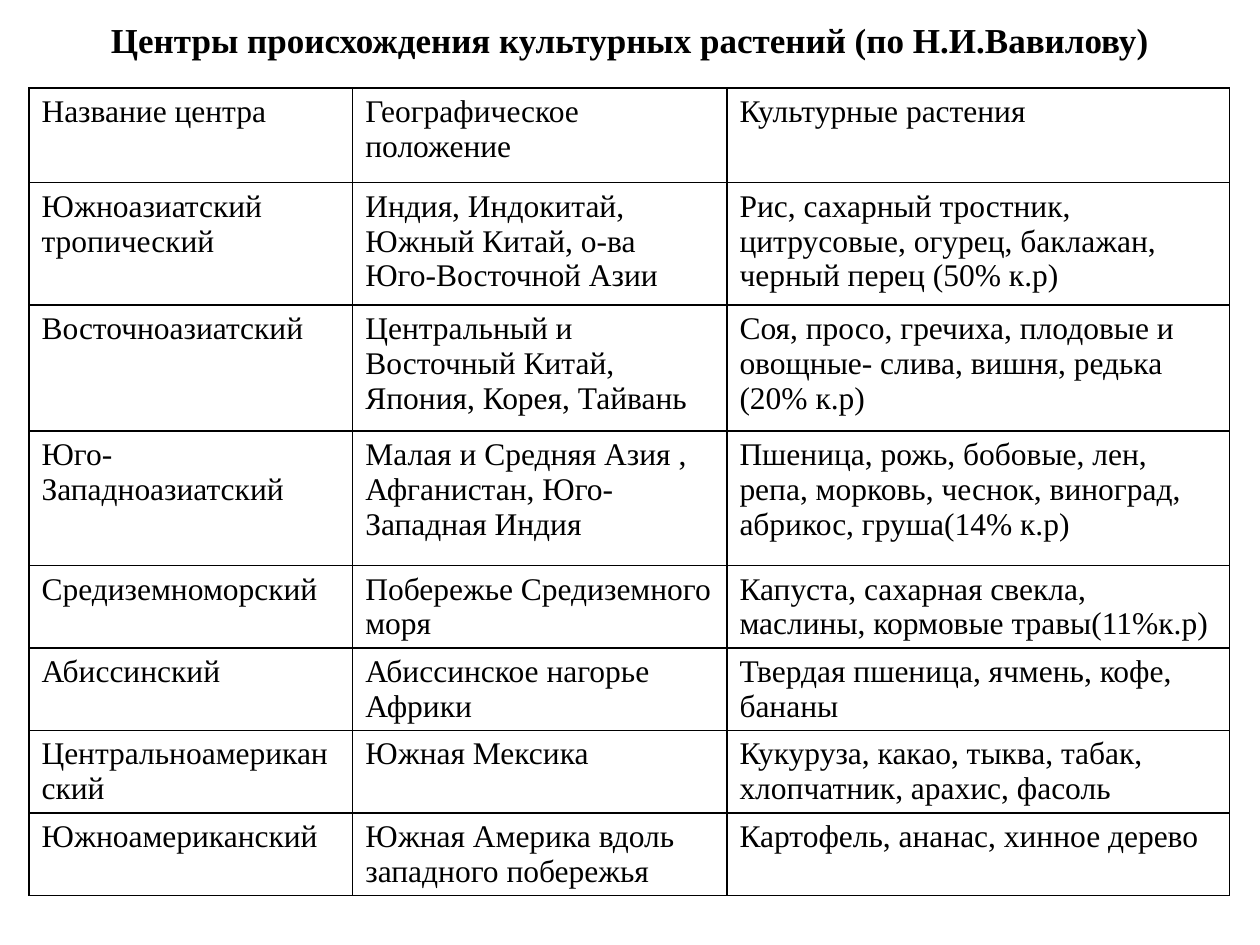
from lxml.etree import SubElement
from pptx import Presentation
from pptx.dml.color import RGBColor
from pptx.enum.text import MSO_ANCHOR, PP_ALIGN
from pptx.oxml.ns import qn
from pptx.util import Inches, Pt

FONT = "Times New Roman"
INK = "000000"
TITLE = "Центры происхождения культурных растений (по Н.И.Вавилову)"
CENTERS = [
    ("Название центра", "Географическое положение", "Культурные растения"),
    ("Южноазиатский тропический",
     "Индия, Индокитай, Южный Китай, о-ва Юго-Восточной Азии",
     "Рис, сахарный тростник, цитрусовые, огурец, баклажан, черный перец (50% к.р)"),
    ("Восточноазиатский",
     "Центральный и Восточный Китай, Япония, Корея, Тайвань",
     "Соя, просо, гречиха, плодовые и овощные- слива, вишня, редька (20% к.р)"),
    ("Юго-Западноазиатский",
     "Малая и Средняя Азия , Афганистан, Юго-Западная Индия",
     "Пшеница, рожь, бобовые, лен, репа, морковь, чеснок, виноград, абрикос, груша(14% к.р)"),
    ("Средиземноморский",
     "Побережье Средиземного моря",
     "Капуста, сахарная свекла, маслины, кормовые травы(11%к.р)"),
    ("Абиссинский",
     "Абиссинское нагорье Африки",
     "Твердая пшеница, ячмень, кофе, бананы"),
    ("Центральноамериканский",
     "Южная Мексика",
     "Кукуруза, какао, тыква, табак, хлопчатник, арахис, фасоль"),
    ("Южноамериканский",
     "Южная Америка вдоль западного побережья",
     "Картофель, ананас, хинное дерево"),
]
COLUMN_WIDTHS = [2.57, 2.97, 3.99]
ROW_HEIGHTS = [0.75, 0.97, 1, 1.07] + [0.65] * 4


def color(value):
    return RGBColor.from_string(value)


def style(paragraph, size, bold=False):
    paragraph.font.name = FONT
    paragraph.font.size = Pt(size)
    paragraph.font.bold = bold
    paragraph.font.color.rgb = color(INK)


def outline(cell):
    properties = cell._tc.get_or_add_tcPr()
    for side in ("a:lnL", "a:lnR", "a:lnT", "a:lnB"):
        border = SubElement(properties, qn(side), w=str(Pt(1)))
        fill = SubElement(border, qn("a:solidFill"))
        SubElement(fill, qn("a:srgbClr"), val=INK)


def add_title(slide):
    title = slide.shapes.title
    title.left, title.top = Inches(0.5), 0
    title.width, title.height = Inches(9), Inches(0.62)
    title.text_frame.text = TITLE
    title.text_frame.vertical_anchor = MSO_ANCHOR.MIDDLE
    heading = title.text_frame.paragraphs[0]
    heading.alignment = PP_ALIGN.CENTER
    style(heading, 20, True)


def add_centers(slide):
    table = slide.shapes.add_table(
        len(CENTERS), len(COLUMN_WIDTHS), Inches(0.23), Inches(0.7),
        Inches(sum(COLUMN_WIDTHS)), Inches(sum(ROW_HEIGHTS))).table
    table.first_row = table.horz_banding = False
    for column, width in zip(table.columns, COLUMN_WIDTHS):
        column.width = Inches(width)
    for row, height, center in zip(table.rows, ROW_HEIGHTS, CENTERS):
        row.height = Inches(height)
        for cell, entry in zip(row.cells, center):
            cell.text = entry
            style(cell.text_frame.paragraphs[0], 18)
            outline(cell)
            cell.fill.background()


def main():
    deck = Presentation()
    deck.slide_width, deck.slide_height = Inches(10), Inches(7.5)
    slide = deck.slides.add_slide(deck.slide_layouts[5])
    add_title(slide)
    add_centers(slide)
    deck.save("out.pptx")


if __name__ == "__main__":
    main()
